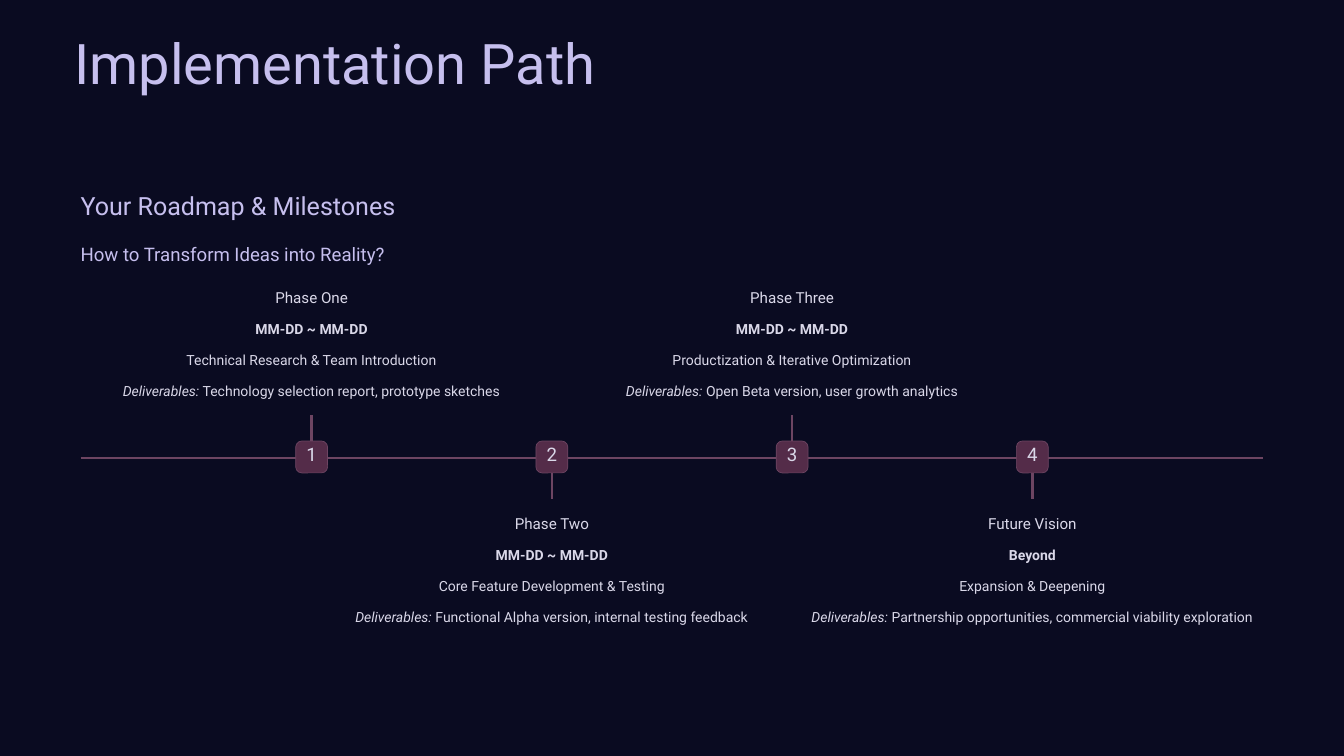
from dataclasses import dataclass

from pptx import Presentation
from pptx.dml.color import RGBColor as Rgb
from pptx.enum.shapes import MSO_CONNECTOR as Link, MSO_SHAPE as Form
from pptx.enum.text import MSO_ANCHOR as Anchor, PP_ALIGN as Align
from pptx.oxml.ns import qn
from pptx.util import Inches, Pt


@dataclass(frozen=True)
class Theme:
    """Hold the colours, font and type sizes."""
    font: str = "Roboto"
    back: str = "0A0B21"
    head: str = "C6BFEE"
    body: str = "DAD8E9"
    line: str = "6D4562"
    fill: str = "542C49"
    title: float = 48
    topic: float = 21.5
    lead: float = 16
    phase: float = 13
    small: float = 12
    rule: float = 2
    edge: float = 0.6


def write(frame, text, *, font, size, color, pitch, lead="", align=Align.LEFT, bold=False):
    """Fill a text frame with one line and an optional italic lead-in."""
    frame.margin_left = frame.margin_right = frame.margin_top = frame.margin_bottom = 0
    frame.vertical_anchor = Anchor.TOP
    frame.word_wrap = False
    para = frame.paragraphs[0]
    para.alignment = align
    para.line_spacing = Pt(pitch)
    for part, slant in ((lead, True), (text, False)):
        if part:
            run = para.add_run()
            run.text = part
            run.font.name = font
            run.font.size = Pt(size)
            run.font.bold = bold
            run.font.italic = slant
            run.font.color.rgb = Rgb.from_string(color)


class Deck:
    """Draw styled elements on the current slide."""

    def __init__(self, theme):
        """Start a wide deck with one blank slide."""
        self.theme = theme
        self.file = Presentation()
        self.file.slide_width, self.file.slide_height = Inches(16), Inches(9)
        self.slide = self.file.slides.add_slide(self.file.slide_layouts[6])
        fill = self.slide.background.fill
        fill.solid()
        fill.fore_color.rgb = Rgb.from_string(theme.back)

    def text(self, spot, text, **style):
        """Add a text box."""
        box = self.slide.shapes.add_textbox(*map(Inches, spot))
        write(box.text_frame, text, font=self.theme.font, **style)

    def rule(self, x1, y1, x2, y2):
        """Add a straight line."""
        line = self.slide.shapes.add_connector(Link.STRAIGHT, *map(Inches, (x1, y1, x2, y2)))
        line.line.width = Pt(self.theme.rule)
        line.line.color.rgb = Rgb.from_string(self.theme.line)
        props = line._element.spPr
        props.append(props.makeelement(qn("a:effectLst"), {}))
        return line

    def badge(self, x, y, side, text):
        """Add a numbered square with round corners."""
        look = self.theme
        box = self.slide.shapes.add_shape(Form.ROUNDED_RECTANGLE, *map(Inches, (x, y, side, side)))
        box.shadow.inherit = False
        box.adjustments[0] = 0.19
        box.fill.solid()
        box.fill.fore_color.rgb = Rgb.from_string(look.fill)
        box.line.color.rgb = Rgb.from_string(look.line)
        box.line.width = Pt(look.edge)
        write(box.text_frame, text, font=look.font, size=look.lead, color=look.body,
              pitch=16, align=Align.CENTER)
        box.text_frame.margin_top = Inches(0.04)
        return box

    def phase(self, mid, top, name, date, goal, goods):
        """Add the four centred lines of a phase."""
        look = self.theme
        style = dict(color=look.body, align=Align.CENTER)
        self.text((mid - 0.93, top, 1.86, 0.23), name, size=look.phase, pitch=16.5, **style)
        rows = ((date, dict(bold=True)), (goal, {}), (" " + goods, dict(lead="Deliverables:")))
        for row, (text, extra) in enumerate(rows):
            spot = (mid - 2.75, top + 0.33 + 0.37 * row, 5.5, 0.27)
            self.text(spot, text, size=look.small, pitch=19, **style, **extra)


PHASES = (
    ("Phase One", "MM-DD ~ MM-DD", "Technical Research & Team Introduction",
     "Technology selection report, prototype sketches"),
    ("Phase Two", "MM-DD ~ MM-DD", "Core Feature Development & Testing",
     "Functional Alpha version, internal testing feedback"),
    ("Phase Three", "MM-DD ~ MM-DD", "Productization & Iterative Optimization",
     "Open Beta version, user growth analytics"),
    ("Future Vision", "Beyond", "Expansion & Deepening",
     "Partnership opportunities, commercial viability exploration"),
)


def main():
    """Build the roadmap slide."""
    look = Theme()
    deck = Deck(look)
    heads = (
        ((0.89, 0.67, 7, 0.47), "Implementation Path", look.title, 33.5),
        ((0.96, 2.26, 4.14, 0.37), "Your Roadmap & Milestones", look.topic, 26.5),
        ((0.96, 2.88, 4.04, 0.28), "How to Transform Ideas into Reality?", look.lead, 20),
    )
    for spot, text, size, pitch in heads:
        deck.text(spot, text, size=size, color=look.head, pitch=pitch)

    deck.rule(0.96, 5.45, 15.03, 5.45)
    side, top = 0.38, 5.25
    for step, phase in enumerate(PHASES):
        mid = 3.71 + 2.86 * step
        above = step % 2 == 0
        badge = deck.badge(mid - side / 2, top, side, str(step + 1))
        near, far = (top, 4.94) if above else (top + side, 5.94)
        stem = deck.rule(mid, near, mid, far)
        stem.begin_connect(badge, 0 if above else 2)
        deck.phase(mid, 3.42 if above else 6.11, *phase)
    deck.file.save("out.pptx")


if __name__ == "__main__":
    main()
